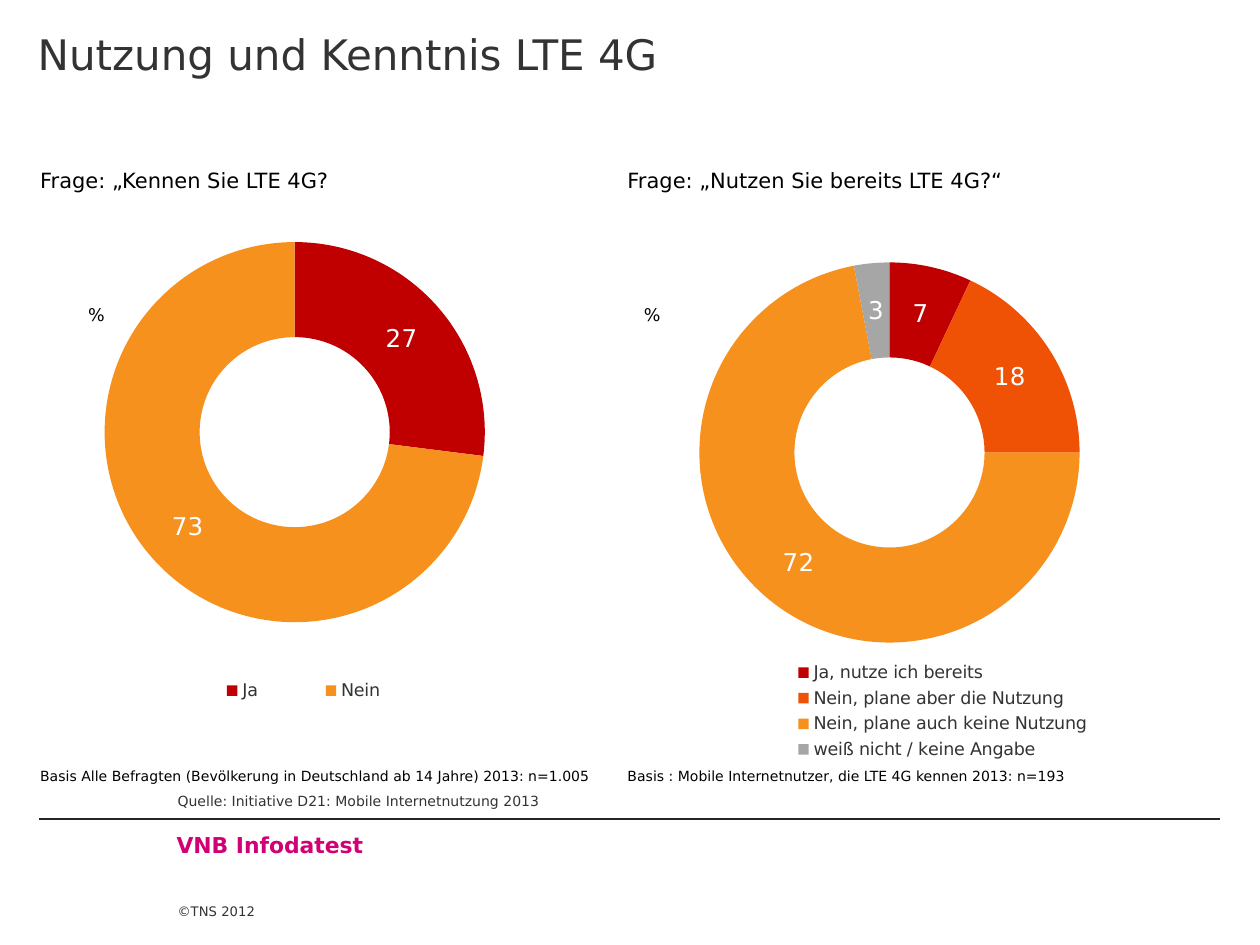
from dataclasses import dataclass

from lxml import etree
from pptx import Presentation
from pptx.chart.data import CategoryChartData
from pptx.dml.color import RGBColor
from pptx.enum.chart import XL_CHART_TYPE, XL_LEGEND_POSITION
from pptx.enum.shapes import MSO_CONNECTOR
from pptx.enum.text import MSO_ANCHOR
from pptx.oxml import parse_xml
from pptx.oxml.ns import nsdecls, qn
from pptx.util import Cm, Pt

DOUGHNUT = XL_CHART_TYPE.DOUGHNUT
LEGEND_RIGHT = XL_LEGEND_POSITION.RIGHT
STRAIGHT = MSO_CONNECTOR.STRAIGHT
TOP, BOTTOM = MSO_ANCHOR.TOP, MSO_ANCHOR.BOTTOM

BLACK = RGBColor(0x00, 0x00, 0x00)
WHITE = RGBColor(0xFF, 0xFF, 0xFF)
DARK_GREY = RGBColor(0x33, 0x33, 0x33)
RULE_GREY = RGBColor(0x26, 0x26, 0x26)
MAGENTA = RGBColor(0xD1, 0x00, 0x74)
RED = RGBColor(0xC0, 0x00, 0x00)
DEEP_ORANGE = RGBColor(0xEF, 0x52, 0x05)
ORANGE = RGBColor(0xF7, 0x91, 0x1E)
GREY = RGBColor(0xA6, 0xA6, 0xA6)

FONT = "DejaVu Sans"
DEFAULT_INSETS = (0.25, 0.13, 0.25, 0.13)
NO_INSETS = (0, 0, 0, 0)
PLOT_AREA = (0.142, 0.157, 0.302, 0.562)


@dataclass
class Panel:
    left: float
    question: str
    question_width: float
    basis: str
    basis_width: float
    percent_offset: float
    chart_offset: tuple
    legend_area: tuple
    answers: list


def style_font(font, size, color, bold=False):
    font.name = FONT
    font.size = Pt(size)
    font.bold = bold
    font.color.rgb = color


def add_text(page, area, text, size, color, insets=DEFAULT_INSETS, anchor=TOP, bold=False):
    box = page.shapes.add_textbox(*map(Cm, area))
    frame = box.text_frame
    frame.word_wrap = True
    frame.vertical_anchor = anchor
    frame.margin_left, frame.margin_top, frame.margin_right, frame.margin_bottom = map(Cm, insets)
    frame.text = text
    style_font(frame.paragraphs[0].runs[0].font, size, color, bold)


def make_layout(area, inner=False):
    target = '<c:layoutTarget val="inner"/>' if inner else ""
    sizes = "".join(f'<c:{tag} val="{value}"/>' for tag, value in zip("xywh", area))
    return parse_xml(
        f'<c:layout {nsdecls("c")}><c:manualLayout>{target}'
        f'<c:xMode val="edge"/><c:yMode val="edge"/>{sizes}'
        "</c:manualLayout></c:layout>"
    )


def add_doughnut(page, area, answers, legend_area):
    data = CategoryChartData()
    data.categories = [name for name, value, color in answers]
    data.add_series("Series 1", [value for name, value, color in answers])
    chart = page.shapes.add_chart(DOUGHNUT, *map(Cm, area), data).chart
    chart.has_title = False
    style_font(chart.font, 18, BLACK)

    plot = chart.plots[0]
    plot.vary_by_categories = True
    for index, (name, value, color) in enumerate(answers):
        fill = plot.series[0].points[index].format.fill
        fill.solid()
        fill.fore_color.rgb = color
    plot.has_data_labels = True
    labels = plot.data_labels
    labels.show_value = True
    labels.show_percentage = False
    labels.number_format = "0"
    labels.number_format_is_linked = False
    style_font(labels.font, 14, WHITE)

    chart.has_legend = True
    legend = chart.legend
    legend.position = LEGEND_RIGHT
    legend.include_in_layout = False
    style_font(legend.font, 10, DARK_GREY)

    root = chart.element
    root.find(".//" + qn("c:holeSize")).set("val", "40")
    plot_area = root.find(".//" + qn("c:plotArea"))
    for old_layout in plot_area.findall(qn("c:layout")):
        plot_area.remove(old_layout)
    plot_area.insert(0, make_layout(PLOT_AREA, inner=True))
    legend_element = root.find(".//" + qn("c:legend"))
    for old_layout in legend_element.findall(qn("c:layout")):
        legend_element.remove(old_layout)
    legend_element.find(qn("c:legendPos")).addnext(make_layout(legend_area))


def add_panel(page, panel, top):
    left = panel.left
    chart_x, chart_y = panel.chart_offset
    add_doughnut(page, (left + chart_x, top + chart_y, 25.4, 13.64),
                 panel.answers, panel.legend_area)
    add_text(page, (left, top, panel.question_width, 0.76), panel.question, 12, BLACK)
    add_text(page, (left + panel.percent_offset, top + 2.87, 0.91, 0.43),
             "%", 10, BLACK, NO_INSETS)
    add_text(page, (left, top + 12.09, panel.basis_width, 0.61), panel.basis, 8, BLACK)


def add_footer(page, left, top, width):
    rule = page.shapes.add_connector(STRAIGHT, Cm(left), Cm(top), Cm(left + width), Cm(top))
    rule.line.color.rgb = RULE_GREY
    rule.line.width = Pt(0.75)
    etree.SubElement(rule._element.spPr, qn("a:effectLst"))
    text_left = left + 2.79
    add_text(page, (text_left, top - 0.91, 21, 1.02),
             "Quelle: Initiative D21: Mobile Internetnutzung 2013",
             8, DARK_GREY, (0, 0, 0, 0.3), BOTTOM)
    add_text(page, (left + 1.4, top, 20.98, 1.04), "VNB Infodatest",
             12.5, MAGENTA, (1.37, 0.25, 0.25, 0.13), bold=True)
    add_text(page, (text_left, top + 1.07, 2.11, 1.47), "©TNS 2012",
             7.5, DARK_GREY, (0, 0, 0, 0.74), BOTTOM)


def main():
    deck = Presentation()
    deck.slide_width, deck.slide_height = Cm(25.4), Cm(19.05)
    page = deck.slides.add_slide(deck.slide_layouts[6])
    panels = [
        Panel(
            left=0.56,
            question="Frage: „Kennen Sie LTE 4G?",
            question_width=6.58,
            basis="Basis Alle Befragten (Bevölkerung in Deutschland ab 14 Jahre) 2013: n=1.005",
            basis_width=12.17,
            percent_offset=1.22,
            chart_offset=(-2.06, -0.51),
            legend_area=(0.19, 0.79, 0.22, 0.06),
            answers=[("Ja", 27, RED), ("Nein", 73, ORANGE)],
        ),
        Panel(
            left=12.4,
            question="Frage: „Nutzen Sie bereits LTE 4G?“",
            question_width=9.17,
            basis="Basis : Mobile Internetnutzer, die LTE 4G kennen 2013: n=193",
            basis_width=11.1,
            percent_offset=0.58,
            chart_offset=(-1.91, -0.1),
            legend_area=(0.21, 0.74, 0.25, 0.16),
            answers=[
                ("Ja, nutze ich bereits", 7, RED),
                ("Nein, plane aber die Nutzung", 18, DEEP_ORANGE),
                ("Nein, plane auch keine Nutzung", 72, ORANGE),
                ("weiß nicht / keine Angabe", 3, GREY),
            ],
        ),
    ]
    add_text(page, (0, 0, 25.4, 2.87), "Nutzung und Kenntnis LTE 4G",
             24, DARK_GREY, (0.76, 0.58, 0.76, 0))
    for panel in panels:
        add_panel(page, panel, 3.25)
    add_footer(page, 0.79, 16.51, 23.8)
    deck.save("out.pptx")


if __name__ == "__main__":
    main()
